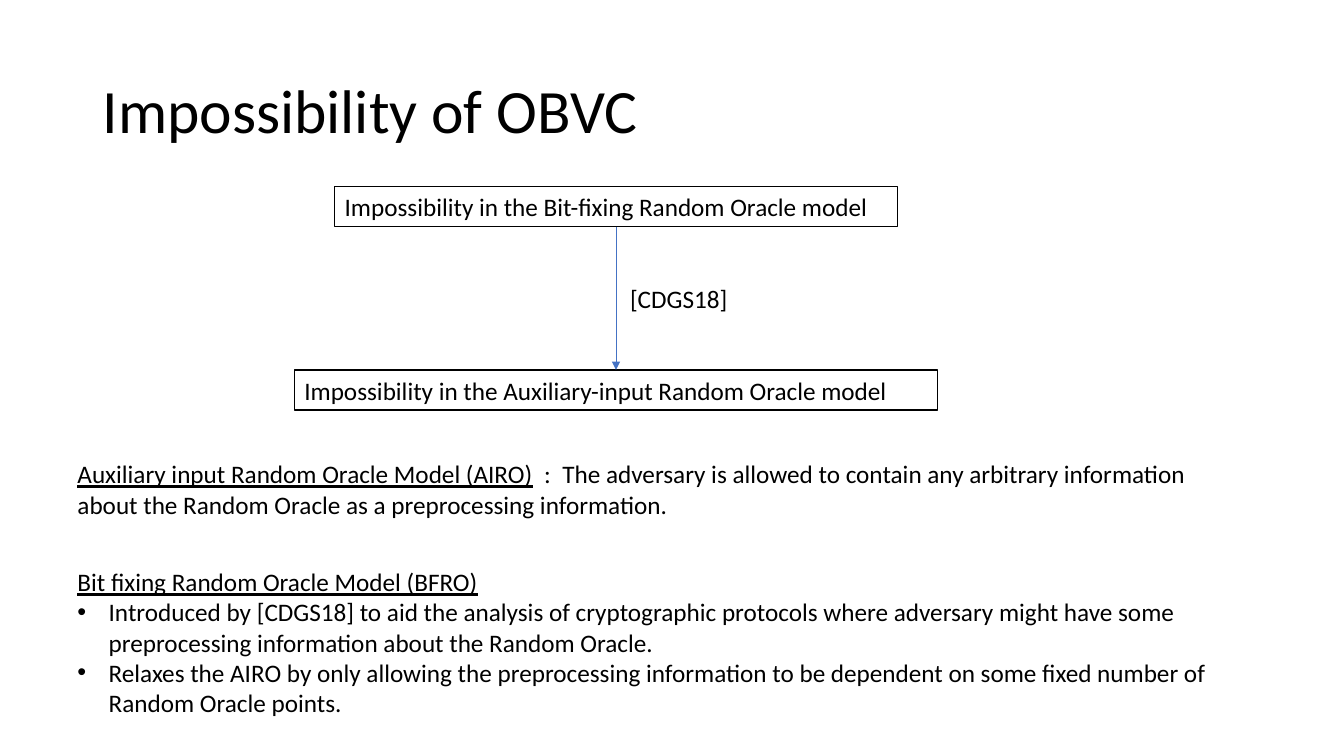
from lxml.etree import SubElement
from pptx import Presentation
from pptx.dml.color import RGBColor
from pptx.enum.shapes import MSO_CONNECTOR as Connector, MSO_SHAPE as Shape
from pptx.enum.text import MSO_ANCHOR as Anchor, MSO_AUTO_SIZE as AutoSize, PP_ALIGN as Align
from pptx.oxml.ns import qn
from pptx.util import Emu, Pt

BLACK, BLUE = "000000", "4472C4"


def px(value):
    return Emu(value * 9144)


def color(value):
    return RGBColor.from_string(value)


class SlideBuilder:
    """Holds the text style and the slide, and adds each kind of element."""

    def __init__(self, presentation):
        self.slide = presentation.slides.add_slide(presentation.slide_layouts[6])
        self.style = {"name": "Calibri", "size": Pt(18), "underline": False}

    def fill_text(self, shape, paragraphs, line_spacing=1.0, **overrides):
        frame = shape.text_frame
        frame.word_wrap = True
        for index, (runs, bulleted) in enumerate(paragraphs):
            paragraph = frame.paragraphs[0] if index == 0 else frame.add_paragraph()
            paragraph.alignment = Align.LEFT
            paragraph.line_spacing = line_spacing
            if bulleted:
                self.add_bullet(paragraph)
            for text, underline in runs:
                run = paragraph.add_run()
                run.text = text
                for key, value in {**self.style, "underline": underline, **overrides}.items():
                    setattr(run.font, key, value)
                run.font.color.rgb = color(BLACK)

    def add_bullet(self, paragraph):
        properties = paragraph._p.get_or_add_pPr()
        properties.set("marL", str(px(31)))
        properties.set("indent", str(-px(31)))
        SubElement(properties, qn("a:buFont"), typeface="Arial")
        SubElement(properties, qn("a:buChar"), char="•")

    def add_text(self, bounds, paragraphs, anchor=Anchor.TOP, auto_size=AutoSize.SHAPE_TO_FIT_TEXT, **format_values):
        shape = self.slide.shapes.add_textbox(*map(px, bounds))
        shape.text_frame.vertical_anchor = anchor
        self.fill_text(shape, paragraphs, **format_values)
        shape.text_frame.auto_size = auto_size

    def add_box(self, bounds, text):
        shape = self.slide.shapes.add_shape(Shape.RECTANGLE, *map(px, bounds))
        shape.shadow.inherit = False
        shape.fill.background()
        shape.line.color.rgb = color(BLACK)
        shape.line.width = Pt(1)
        shape.text_frame.vertical_anchor = Anchor.TOP
        self.fill_text(shape, [plain(text)])
        shape.text_frame.auto_size = AutoSize.SHAPE_TO_FIT_TEXT
        return shape

    def add_arrow(self, upper, lower):
        arrow = self.slide.shapes.add_connector(Connector.STRAIGHT, 0, 0, 0, 0)
        arrow.begin_connect(upper, 2)
        arrow.end_connect(lower, 0)
        arrow.line.color.rgb = color(BLUE)
        arrow.line.width = Pt(0.5)
        SubElement(arrow.line._get_or_add_ln(), qn("a:tailEnd"), type="triangle")
        SubElement(arrow._element.spPr, qn("a:effectLst"))


def plain(text):
    return [(text, False)], False


def bullet(text):
    return [(text, False)], True


def term(text, explanation=""):
    runs = [(text, True)]
    if explanation:
        runs.append((explanation, False))
    return runs, False


def main():
    presentation = Presentation()
    presentation.slide_width, presentation.slide_height = px(1333), px(750)
    builder = SlideBuilder(presentation)

    builder.add_text((92, 40, 1150, 145), [plain("Impossibility of OBVC")], anchor=Anchor.MIDDLE,
                     auto_size=AutoSize.NONE, line_spacing=0.9, size=Pt(44))
    bit_fixing = builder.add_box((332, 185, 558, 40), "Impossibility in the Bit-fixing Random Oracle model")
    auxiliary = builder.add_box((292, 367, 638, 40), "Impossibility in the Auxiliary-input Random Oracle model")
    builder.add_arrow(bit_fixing, auxiliary)
    builder.add_text((615, 276, 135, 40), [plain("[CDGS18]")])

    builder.add_text((67, 450, 1163, 71), [
        term("Auxiliary input Random Oracle Model (AIRO)",
             "  :  The adversary is allowed to contain any arbitrary information "
             "about the Random Oracle as a preprocessing information."),
    ])
    builder.add_text((67, 557, 1163, 162), [
        term("Bit fixing Random Oracle Model (BFRO)"),
        bullet("Introduced by [CDGS18] to aid the analysis of cryptographic protocols where "
               "adversary might have some preprocessing information about the Random Oracle."),
        bullet("Relaxes the AIRO by only allowing the preprocessing information to be dependent "
               "on some fixed number of Random Oracle points."),
    ])
    presentation.save("out.pptx")


if __name__ == "__main__":
    main()
